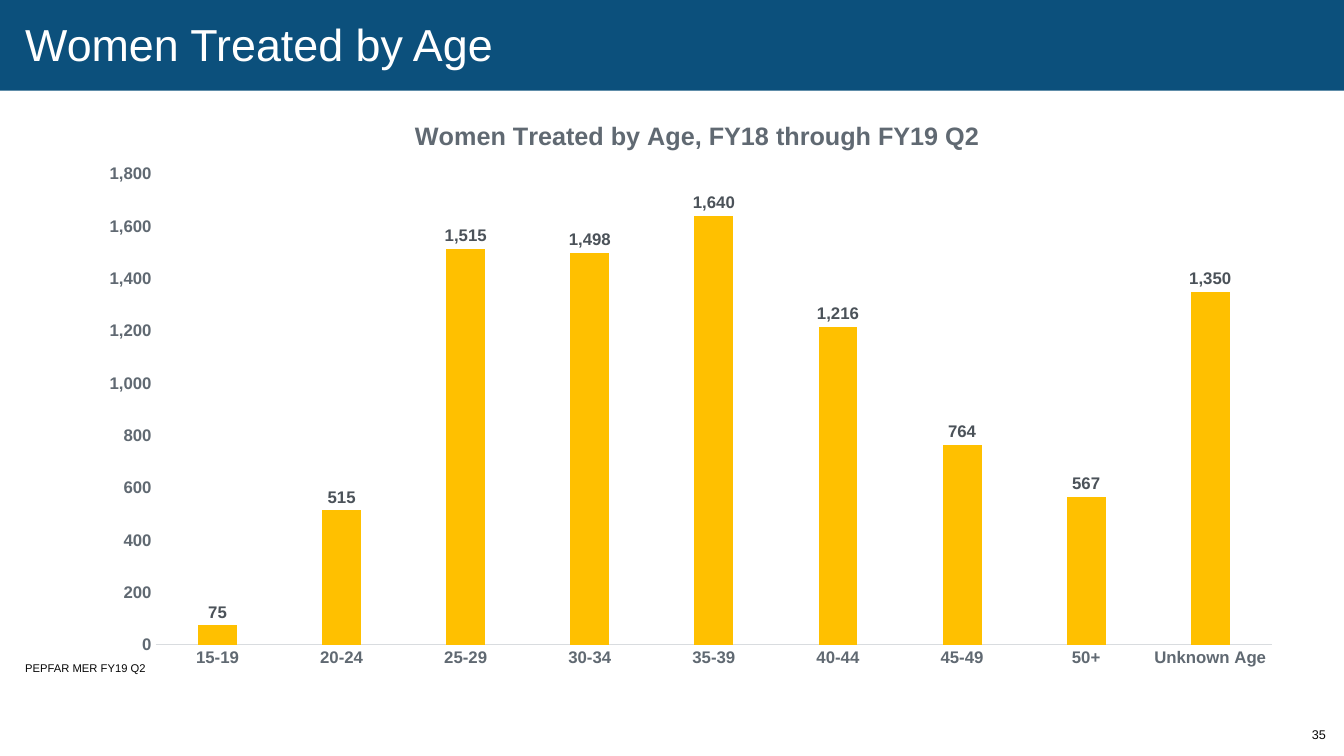
from lxml.etree import SubElement
from pptx import Presentation
from pptx.chart.data import CategoryChartData
from pptx.dml.color import RGBColor
from pptx.enum.chart import XL_CHART_TYPE, XL_LABEL_POSITION, XL_TICK_MARK
from pptx.enum.shapes import MSO_SHAPE
from pptx.enum.text import MSO_ANCHOR, PP_ALIGN
from pptx.oxml.ns import qn
from pptx.util import Inches, Pt

color = RGBColor.from_string


def write(frame, text, size, fill, bold=False, align=PP_ALIGN.LEFT, anchor=MSO_ANCHOR.TOP):
    frame.word_wrap = True
    frame.vertical_anchor = anchor
    frame.margin_left = frame.margin_right = frame.margin_top = frame.margin_bottom = 0
    para = frame.paragraphs[0]
    para.alignment = align
    para.line_spacing = 0.9
    span = para.add_run()
    span.text = text
    span.font.name = "Arial"
    span.font.size = Pt(size)
    span.font.bold = bold
    span.font.color.rgb = color(fill)


def place(parent, index, **settings):
    for old in parent.findall(qn("c:layout")):
        parent.remove(old)
    layout = parent.makeelement(qn("c:layout"))
    parent.insert(index, layout)
    manual = SubElement(layout, qn("c:manualLayout"))
    for name, value in settings.items():
        SubElement(manual, qn(f"c:{name}")).set("val", str(value))


deck = Presentation()
deck.slide_width = Inches(13.33)
deck.slide_height = Inches(7.5)
page = deck.slides.add_slide(deck.slide_layouts[5])

band = page.shapes.add_shape(MSO_SHAPE.RECTANGLE, 0, 0, deck.slide_width, Inches(0.9))
band.shadow.inherit = False
band.fill.solid()
band.fill.fore_color.rgb = color("0C507C")
band.line.fill.background()
band.element.getparent().insert(2, band.element)

title = page.shapes.title
title.left, title.top = Inches(0.25), Inches(0.22)
title.width, title.height = Inches(12.79), Inches(0.5)
write(title.text_frame, "Women Treated by Age", 32, "FFFFFF", anchor=MSO_ANCHOR.MIDDLE)

source = page.shapes.add_textbox(Inches(0.25), Inches(6.58), Inches(8.46), Inches(0.17))
write(source.text_frame, "PEPFAR MER FY19 Q2", 8, "060606")

number = page.shapes.add_textbox(Inches(12.61), Inches(7.1), Inches(0.54), Inches(0.4))
write(number.text_frame, "35", 9, "060606", align=PP_ALIGN.RIGHT, anchor=MSO_ANCHOR.MIDDLE)

data = CategoryChartData(number_format="#,##0")
data.categories = ["15-19", "20-24", "25-29", "30-34", "35-39", "40-44", "45-49", "50+", "Unknown Age"]
data.add_series("Series 1", [75, 515, 1515, 1498, 1640, 1216, 764, 567, 1350])
chart = page.shapes.add_chart(
    XL_CHART_TYPE.COLUMN_CLUSTERED, Inches(0.82), Inches(0.91), Inches(12.04), Inches(5.84), data
).chart
chart.has_legend = False
chart.font.name = "Arial"
chart.font.size = Pt(10)
chart.font.color.rgb = color("16181A")

chart.has_title = True
heading = chart.chart_title
write(heading.text_frame, "Women Treated by Age, FY18 through FY19 Q2", 18, "606972", bold=True)
heading.include_in_layout = False
place(heading.element if hasattr(heading, "element") else chart.element.find(".//" + qn("c:title")),
      1, xMode="edge", yMode="edge", x=0.27, y=0.04)

plot = chart.plots[0]
plot.gap_width = 219
plot.overlap = -27
plot.vary_by_categories = False
bars = plot.series[0]
bars.format.fill.solid()
bars.format.fill.fore_color.rgb = color("FFC000")

plot.has_data_labels = True
labels = plot.data_labels
labels.show_value = True
labels.position = XL_LABEL_POSITION.OUTSIDE_END
ages, counts = chart.category_axis, chart.value_axis
for part, fill in ((labels, "4B5259"), (ages.tick_labels, "606972"), (counts.tick_labels, "606972")):
    part.font.name = "Arial"
    part.font.size = Pt(12)
    part.font.bold = True
    part.font.color.rgb = color(fill)
for part in (labels, counts.tick_labels):
    part.number_format = "#,##0"
    part.number_format_is_linked = False

for axis in (ages, counts):
    axis.has_major_gridlines = False
    axis.major_tick_mark = XL_TICK_MARK.NONE
    axis.minor_tick_mark = XL_TICK_MARK.NONE
ages.format.line.color.rgb = color("D9DCDF")
ages.format.line.width = Pt(0.75)
counts.format.line.fill.background()
counts.minimum_scale = 0
counts.maximum_scale = 1800
counts.major_unit = 200

place(chart.element.find(".//" + qn("c:plotArea")), 0, layoutTarget="inner",
      xMode="edge", yMode="edge", x=0.06, y=0.14, w=0.92, h=0.8)

deck.save("out.pptx")
